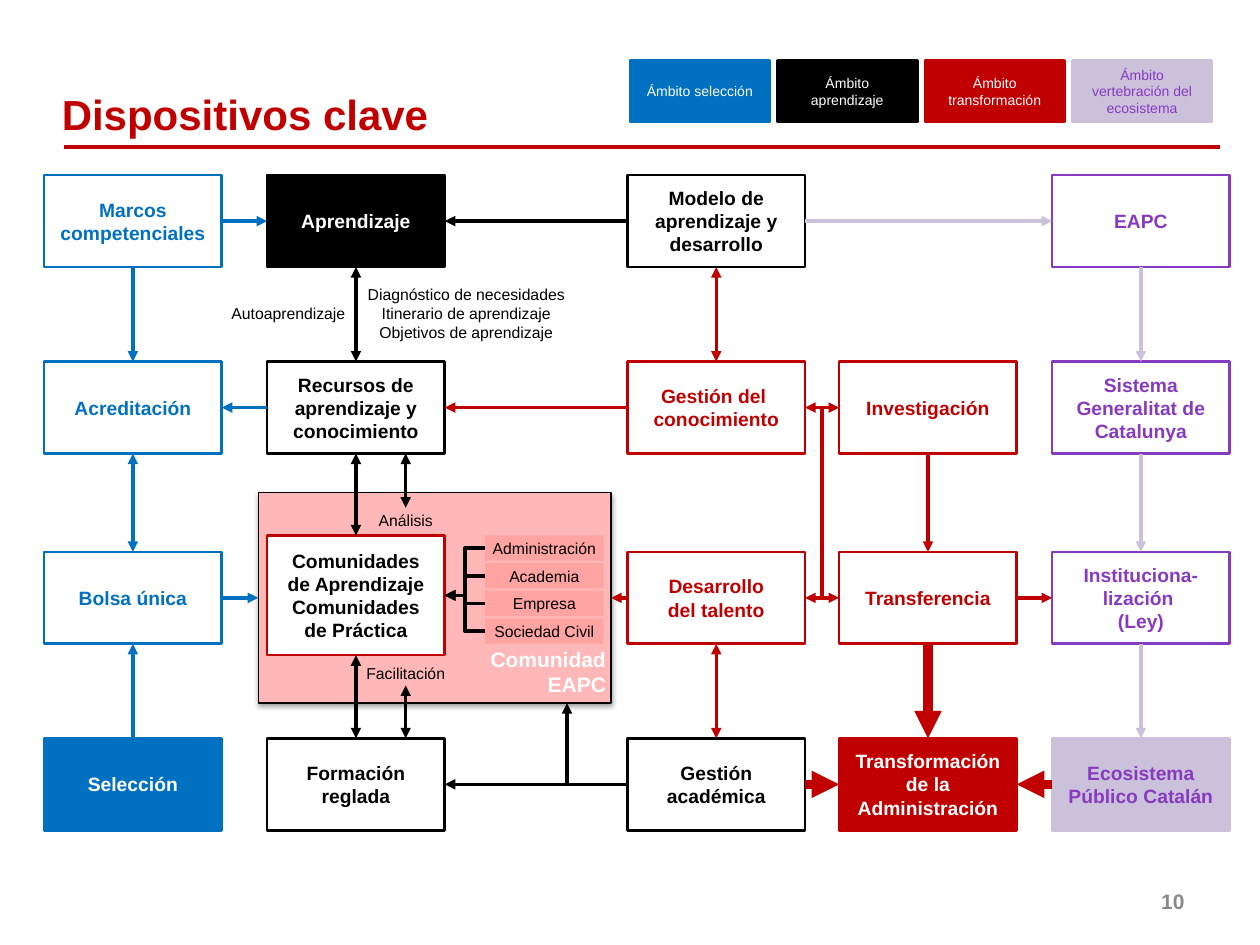
from lxml.etree import SubElement
from pptx import Presentation
from pptx.dml.color import RGBColor
from pptx.enum.shapes import MSO_CONNECTOR, MSO_SHAPE
from pptx.enum.text import MSO_ANCHOR, PP_ALIGN
from pptx.oxml.ns import qn
from pptx.util import Inches, Pt

THEME = dict(
    font="Arial", blue="0070C0", black="000000", red="C00000", purple="873AC0",
    lilac="CCC1DA", white="FFFFFF", pink="FFB7B7", rose="FFA3A3", grey="898989",
    title=24, heading=12, box=11, label=9, legend=8, border=1.5, arrow=2, thick=5.25)

# Content: "|" separates paragraphs, "\n" is a line break
LEGEND = [("Ámbito selección", "blue", "white"), ("Ámbito aprendizaje", "black", "white"),
          ("Ámbito transformación", "red", "white"),
          ("Ámbito vertebración del ecosistema", "lilac", "purple")]

# key: (column, row, text, text colour, border, fill)
NODES = {
    "marcos": (0, 0, "Marcos competenciales", "blue", "blue", None),
    "acreditacion": (0, 1, "Acreditación", "blue", "blue", None),
    "bolsa": (0, 2, "Bolsa única", "blue", "blue", None),
    "seleccion": (0, 3, "Selección", "white", "blue", "blue"),
    "aprendizaje": (1, 0, "Aprendizaje", "white", "black", "black"),
    "recursos": (1, 1, "Recursos de aprendizaje y conocimiento", "black", "black", None),
    "formacion": (1, 3, "Formación reglada", "black", "black", None),
    "modelo": (2, 0, "Modelo de aprendizaje y desarrollo", "black", "black", None),
    "conocimiento": (2, 1, "Gestión del \nconocimiento", "red", "red", None),
    "talento": (2, 2, "Desarrollo\ndel talento", "red", "red", None),
    "academica": (2, 3, "Gestión|académica", "black", "black", None),
    "investigacion": (3, 1, "Investigación", "red", "red", None),
    "transferencia": (3, 2, "Transferencia", "red", "red", None),
    "transformacion": (3, 3, "Transformación de la Administración", "white", "red", "red"),
    "eapc": (4, 0, "EAPC", "purple", "purple", None),
    "sistema": (4, 1, "Sistema\nGeneralitat de Catalunya", "purple", "purple", None),
    "ley": (4, 2, "Instituciona-lización |(Ley)", "purple", "purple", None),
    "ecosistema": (4, 3, "Ecosistema\nPúblico Catalán", "purple", "lilac", "lilac"),
}
MEMBERS = ["Administración", "Academia", "Empresa", "Sociedad Civil"]
LABELS = [  # text, frame, alignment, side inset
    ("Análisis", (2.75, 4.03, 0.94, 0.2), PP_ALIGN.CENTER, 0.04),
    ("Facilitación", (2.75, 5.24, 0.94, 0.2), PP_ALIGN.CENTER, 0.04),
    ("Autoaprendizaje", (1.7, 2.27, 1.04, 0.43), PP_ALIGN.RIGHT, 0),
    ("Diagnóstico de necesidades|Itinerario de aprendizaje|Objetivos de aprendizaje",
     (2.83, 2.27, 1.74, 0.43), PP_ALIGN.CENTER, 0),
]
# colour, width, arrow at both ends, (from, to) pairs
LINKS = [
    ("blue", "arrow", False, [("marcos", "aprendizaje"), ("marcos", "acreditacion"),
                              ("recursos", "acreditacion"), ("seleccion", "bolsa"),
                              ("bolsa", "comunidad")]),
    ("blue", "arrow", True, [("acreditacion", "bolsa")]),
    ("black", "arrow", False, [("modelo", "aprendizaje"), ("academica", "formacion")]
     + [(m, "hub") for m in MEMBERS]),
    ("black", "arrow", True, [("aprendizaje", "recursos"), ("recursos", "hub"),
                              ("hub", "formacion")]),
    ("red", "arrow", False, [("conocimiento", "recursos"), ("talento", "comunidad"),
                             ("investigacion", "transferencia"), ("transferencia", "ley")]),
    ("red", "arrow", True, [("modelo", "conocimiento"), ("talento", "academica"),
                            ("transferencia", "conocimiento"), ("investigacion", "talento")]),
    ("red", "thick", False, [("transferencia", "transformacion"),
                             ("academica", "transformacion"),
                             ("ecosistema", "transformacion")]),
    ("lilac", "arrow", False, [("modelo", "eapc"), ("eapc", "sistema"), ("sistema", "ley"),
                               ("ley", "ecosistema")]),
]

# Geometry
COLS, ROWS = (0.35, 2.12, 4.98, 6.66, 8.35), (1.39, 2.87, 4.38, 5.86)
BOX_W, BOX_H = 1.41, 0.73
frames = {k: (COLS[n[0]], ROWS[n[1]], BOX_W, BOX_H) for k, n in NODES.items()}
frames["comunidad"] = (2.05, 3.91, 2.8, 1.67)
frames["hub"] = (COLS[1], 4.25, BOX_W, 0.95)
for i, m in enumerate(MEMBERS):
    frames[m] = (3.85, 4.25 + 0.22 * i, 0.94, 0.2)

prs = Presentation()
prs.slide_width, prs.slide_height = Inches(10), Inches(7.5)
s = prs.slides.add_slide(prs.slide_layouts[5])


def color(name):
    return RGBColor.from_string(THEME[name])


def write(sp, text, fg, size, bold=False, align=PP_ALIGN.CENTER,
          anchor=MSO_ANCHOR.MIDDLE, inset=0.1):
    tf = sp.text_frame
    tf.word_wrap, tf.vertical_anchor = True, anchor
    tf.margin_left = tf.margin_right = Inches(inset)
    tf.margin_top = tf.margin_bottom = Inches(0.05)
    for i, para in enumerate(text.split("|")):
        p = tf.add_paragraph() if i else tf.paragraphs[0]
        p.alignment = align
        for j, line in enumerate(para.split("\n")):
            if j:
                p.add_line_break()
            r = p.add_run()
            r.text = line
            r.font.name, r.font.size, r.font.bold = THEME["font"], Pt(THEME[size]), bold
            r.font.color.rgb = color(fg)


def rect(frame, fill, border, width=THEME["border"]):
    sp = s.shapes.add_shape(MSO_SHAPE.RECTANGLE, *map(Inches, frame))
    sp.shadow.inherit = False
    if fill:
        sp.fill.solid()
        sp.fill.fore_color.rgb = color(fill)
    else:
        sp.fill.background()
    if border:
        sp.line.color.rgb, sp.line.width = color(border), Pt(width)
    else:
        sp.line.fill.background()
    return sp


def label(frame, *args, **kwargs):
    write(s.shapes.add_textbox(*map(Inches, frame)), *args, **kwargs)


def line(start, end, fg, width, ends=(), kind=MSO_CONNECTOR.STRAIGHT):
    cx = s.shapes.add_connector(kind, *map(Inches, start + end))
    cx.line.color.rgb, cx.line.width = color(fg), Pt(width)
    for tag in ends:
        SubElement(cx.line._get_or_add_ln(), qn(tag), type="triangle")
    SubElement(cx._element.spPr, qn("a:effectLst"))
    return cx


def link(a, b, fg, width, both):
    (ax, ay, aw, ah), (bx, by, bw, bh) = frames[a], frames[b]
    amid, bmid = (ax + aw / 2, ay + ah / 2), (bx + bw / 2, by + bh / 2)
    kind = MSO_CONNECTOR.STRAIGHT
    if abs(amid[0] - bmid[0]) < 0.01:
        down = ay < by
        start, end = (amid[0], ay + ah * down), (bmid[0], by + bh * (not down))
    else:
        right = ax < bx
        start, end = (ax + aw * right, amid[1]), (bx + bw * (not right), bmid[1])
        if abs(amid[1] - bmid[1]) > 0.01:
            kind = MSO_CONNECTOR.ELBOW
    ends = ("a:headEnd", "a:tailEnd") if both else ("a:tailEnd",)
    line(start, end, fg, THEME[width], ends, kind)


# Title, rule and page number
title = s.shapes.title
title.left, title.top, title.width, title.height = map(Inches, (0.39, 0.63, 4.55, 0.55))
write(title, "Dispositivos clave", "red", "title", True, PP_ALIGN.LEFT)
line((0.51, 1.17), (9.68, 1.17), "red", 2.25)
label((7.17, 6.95, 2.33, 0.4), "10", "grey", "heading", True, PP_ALIGN.RIGHT)

# Legend
for i, (text, fill, fg) in enumerate(LEGEND):
    write(rect((5 + 1.17 * i, 0.48, 1.11, 0.49), fill, fill), text, fg, "legend")

# Community panel with soft shadow
panel = rect(frames["comunidad"], "pink", "black", 0.75)
write(panel, "Comunidad\nEAPC", "white", "heading", True, PP_ALIGN.RIGHT,
      MSO_ANCHOR.BOTTOM, 0.04)
shadow = SubElement(panel._element.spPr.find(qn("a:effectLst")), qn("a:outerShdw"),
                    blurRad=str(Pt(3.1)), dist=str(Pt(1.6)), dir="5400000", rotWithShape="0")
SubElement(SubElement(shadow, qn("a:srgbClr"), val=THEME["black"]), qn("a:alpha"), val="38000")
write(rect(frames["hub"], "white", "red"),
      "Comunidades de Aprendizaje|Comunidades de Práctica", "black", "box", True)
for m in MEMBERS:
    write(rect(frames[m], "rose", None), m, "black", "label", inset=0.04)

# Boxes and labels
for key, (col, row, text, fg, border, fill) in NODES.items():
    write(rect(frames[key], fill, border), text, fg, "box", True,
          inset=0 if col in (2, 4) else 0.1)
for text, frame, align, inset in LABELS:
    label(frame, text, "black", "label", align=align, inset=inset)

# Arrows between boxes
for fg, width, both, pairs in LINKS:
    for a, b in pairs:
        link(a, b, fg, width, both)

# Arrows to the labels, and the branch up to the community panel
for top, bottom in ((3.6, 4.03), (5.44, 5.86)):
    line((3.22, top), (3.22, bottom), "black", THEME["arrow"], ("a:headEnd", "a:tailEnd"))
line((4.5, 6.22), (4.5, 5.58), "black", THEME["arrow"], ("a:tailEnd",))

prs.save("out.pptx")
